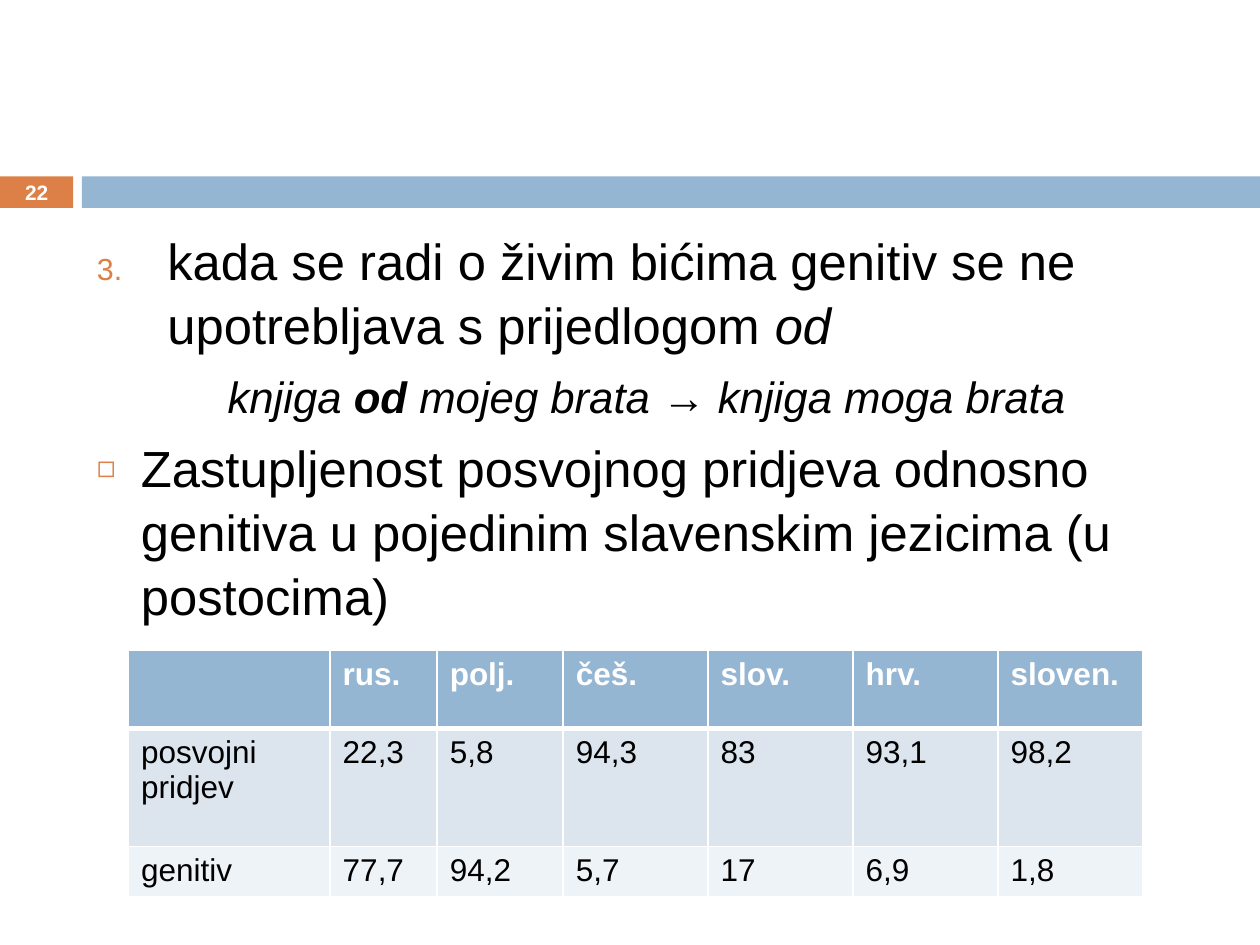
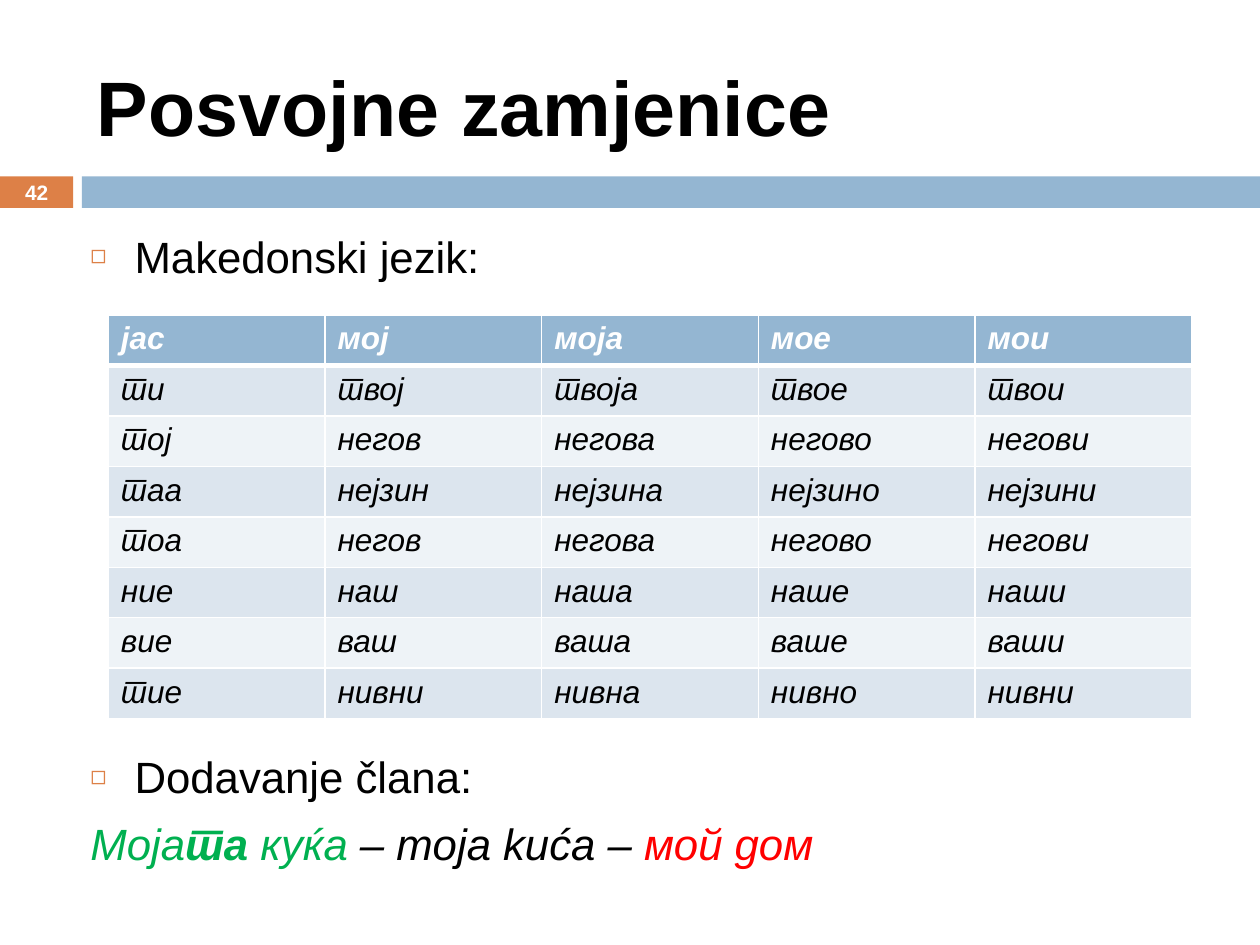
from lxml import etree
from pptx import Presentation
from pptx.dml.color import RGBColor
from pptx.enum.lang import MSO_LANGUAGE_ID as Language
from pptx.enum.shapes import MSO_SHAPE as Shape
from pptx.enum.text import MSO_ANCHOR as Anchor, PP_ALIGN as Align
from pptx.oxml.ns import qn
from pptx.util import Inches, Pt

FONT = "Arial"
BLACK, WHITE = "000000", "FFFFFF"
ORANGE, BLUE = "DD8047", "94B6D2"
BANDS = "DCE5EE", "EEF3F7"
GREEN, RED = "00B050", "FF0000"
MACEDONIAN = Language.from_xml("mk-MK")

PLAIN = {}
ITALIC = {"italic": True}
BOLD_ITALIC = {"italic": True, "bold": True}
CYRILLIC = {"italic": True, "language": MACEDONIAN}

# Each paragraph: size, hanging indent, bullet, and runs of (text, style).
SLIDES = [
    {
        "number": "22",
        "body_box": (0.67, 1.75, 8.92, 5.75),
        "body": [
            {"size": 29, "indent": 0.56, "bullet": 3, "runs": [
                ("kada se radi o živim bićima genitiv se ne upotrebljava s prijedlogom ", PLAIN),
                ("od", ITALIC)]},
            {"size": 25, "indent": 0.56, "align": Align.CENTER, "runs": [
                ("knjiga ", ITALIC),
                ("od", BOLD_ITALIC),
                (" mojeg brata → knjiga moga brata", ITALIC)]},
            {"size": 29, "indent": 0.35, "bullet": "◻", "runs": [
                ("Zastupljenost posvojnog pridjeva odnosno genitiva u pojedinim "
                 "slavenskim jezicima (u postocima)", PLAIN)]},
        ],
        "table": {
            "corner": (1.02, 5.16),
            "columns": [1.6, 0.85, 1] + [1.15] * 4,
            "rows": [0.62, 0.94, 0.37],
            "style": PLAIN,
            "cells": [
                ["", "rus.", "polj.", "češ.", "slov.", "hrv.", "sloven."],
                ["posvojni pridjev", "22,3", "5,8", "94,3", "83", "93,1", "98,2"],
                ["genitiv", "77,7", "94,2", "5,7", "17", "6,9", "1,8"],
            ],
        },
    },
    {
        "number": "42",
        "title": "Posvojne zamjenice",
        "body_box": (0.62, 1.75, 9.56, 5.75),
        "body": [
            {"size": 25, "indent": 0.35, "bullet": "◻",
             "runs": [("Makedonski jezik:", PLAIN)]},
            {"size": 25, "indent": 0.35, "bullet": "◻", "before": 266,
             "runs": [("Dodavanje člana:", PLAIN)]},
            {"size": 25, "indent": 0.35, "runs": [
                ("Моја", {**CYRILLIC, "color": GREEN}),
                ("та", {**CYRILLIC, "color": GREEN, "bold": True}),
                (" куќа ", {**CYRILLIC, "color": GREEN}),
                ("– moja kuća – ", ITALIC),
                ("мой дом", {**CYRILLIC, "color": RED})]},
        ],
        "table": {
            "corner": (0.86, 2.5),
            "columns": [1.72] * 5,
            "rows": [0.4] * 8,
            "style": CYRILLIC,
            "cells": [
                ["јас", "мој", "моја", "мое", "мои"],
                ["ти", "твој", "твоја", "твое", "твои"],
                ["тој", "негов", "негова", "негово", "негови"],
                ["таа", "нејзин", "нејзина", "нејзино", "нејзини"],
                ["тоа", "негов", "негова", "негово", "негови"],
                ["ние", "наш", "наша", "наше", "наши"],
                ["вие", "ваш", "ваша", "ваше", "ваши"],
                ["тие", "нивни", "нивна", "нивно", "нивни"],
            ],
        },
    },
]


def rgb(color):
    return RGBColor.from_string(color)


def add_run(paragraph, text, size, color=BLACK, bold=False, italic=False, language=None):
    run = paragraph.add_run()
    run.text = text
    font = run.font
    font.name, font.size = FONT, Pt(size)
    font.bold, font.italic = bold, italic
    font.color.rgb = rgb(color)
    if language:
        font.language_id = language


def add_text_frame(slide, box, anchor=Anchor.TOP):
    frame = slide.shapes.add_textbox(*map(Inches, box)).text_frame
    frame.word_wrap = True
    frame.vertical_anchor = anchor
    return frame


def add_band(slide, left, width, color):
    band = slide.shapes.add_shape(
        Shape.RECTANGLE, Inches(left), Inches(1.4), Inches(width), Inches(0.25))
    band.shadow.inherit = False
    band.fill.solid()
    band.fill.fore_color.rgb = rgb(color)
    band.line.fill.background()


def set_bullet(properties, bullet):
    """Give an orange marker: a number to count from, or a character."""
    color = etree.SubElement(properties, qn("a:buClr"))
    etree.SubElement(color, qn("a:srgbClr"), val=ORANGE)
    etree.SubElement(properties, qn("a:buSzPct"), val="60000")
    etree.SubElement(properties, qn("a:buFont"), typeface=FONT)
    if isinstance(bullet, int):
        etree.SubElement(properties, qn("a:buAutoNum"),
                         type="arabicPeriod", startAt=str(bullet))
    else:
        etree.SubElement(properties, qn("a:buChar"), char=bullet)


def add_body(slide, box, items):
    frame = add_text_frame(slide, box)
    for index, item in enumerate(items):
        paragraph = frame.add_paragraph() if index else frame.paragraphs[0]
        paragraph.alignment = item.get("align", Align.LEFT)
        paragraph.line_spacing = 1.05
        paragraph.space_before = Pt(item.get("before", 7))
        properties = paragraph._p.get_or_add_pPr()
        indent = Inches(item["indent"])
        properties.set("marL", str(indent))
        properties.set("indent", str(-indent))
        if "bullet" in item:
            set_bullet(properties, item["bullet"])
        for text, style in item["runs"]:
            add_run(paragraph, text, item["size"], **style)


def set_borders(cell, top, bottom):
    properties = cell._tc.get_or_add_tcPr()
    for side, width in zip("LRTB", (1, 1, top, bottom)):
        line = etree.SubElement(properties, qn(f"a:ln{side}"), w=str(Pt(width)))
        fill = etree.SubElement(line, qn("a:solidFill"))
        etree.SubElement(fill, qn("a:srgbClr"), val=WHITE)


def add_table(slide, corner, columns, rows, style, cells):
    box = (*corner, sum(columns), sum(rows))
    table = slide.shapes.add_table(len(rows), len(columns), *map(Inches, box)).table
    for column, width in zip(table.columns, columns):
        column.width = Inches(width)
    for row_index, (row, height) in enumerate(zip(table.rows, rows)):
        row.height = Inches(height)
        header = row_index == 0
        fill = BLUE if header else BANDS[(row_index - 1) % 2]
        for cell, text in zip(row.cells, cells[row_index]):
            set_borders(cell, 3 if row_index == 1 else 1, 3 if header else 1)
            cell.fill.solid()
            cell.fill.fore_color.rgb = rgb(fill)
            if text:
                add_run(cell.text_frame.paragraphs[0], text, 18,
                        color=WHITE if header else BLACK, bold=header, **style)


def build_slide(presentation, content):
    slide = presentation.slides.add_slide(presentation.slide_layouts[6])
    add_band(slide, 0, 0.58, ORANGE)
    add_band(slide, 0.65, 9.35, BLUE)
    number = add_text_frame(slide, (0, 1.39, 0.58, 0.27), Anchor.MIDDLE).paragraphs[0]
    number.alignment = Align.CENTER
    add_run(number, content["number"], 11.9, WHITE, bold=True)
    if "title" in content:
        title = add_text_frame(slide, (0.67, 0.3, 8.92, 1.08), Anchor.MIDDLE)
        add_run(title.paragraphs[0], content["title"], 44.1, bold=True)
    add_body(slide, content["body_box"], content["body"])
    add_table(slide, **content["table"])


def main():
    presentation = Presentation()
    presentation.slide_width, presentation.slide_height = Inches(10), Inches(7.5)
    for content in SLIDES:
        build_slide(presentation, content)
    presentation.save("out.pptx")


if __name__ == "__main__":
    main()
